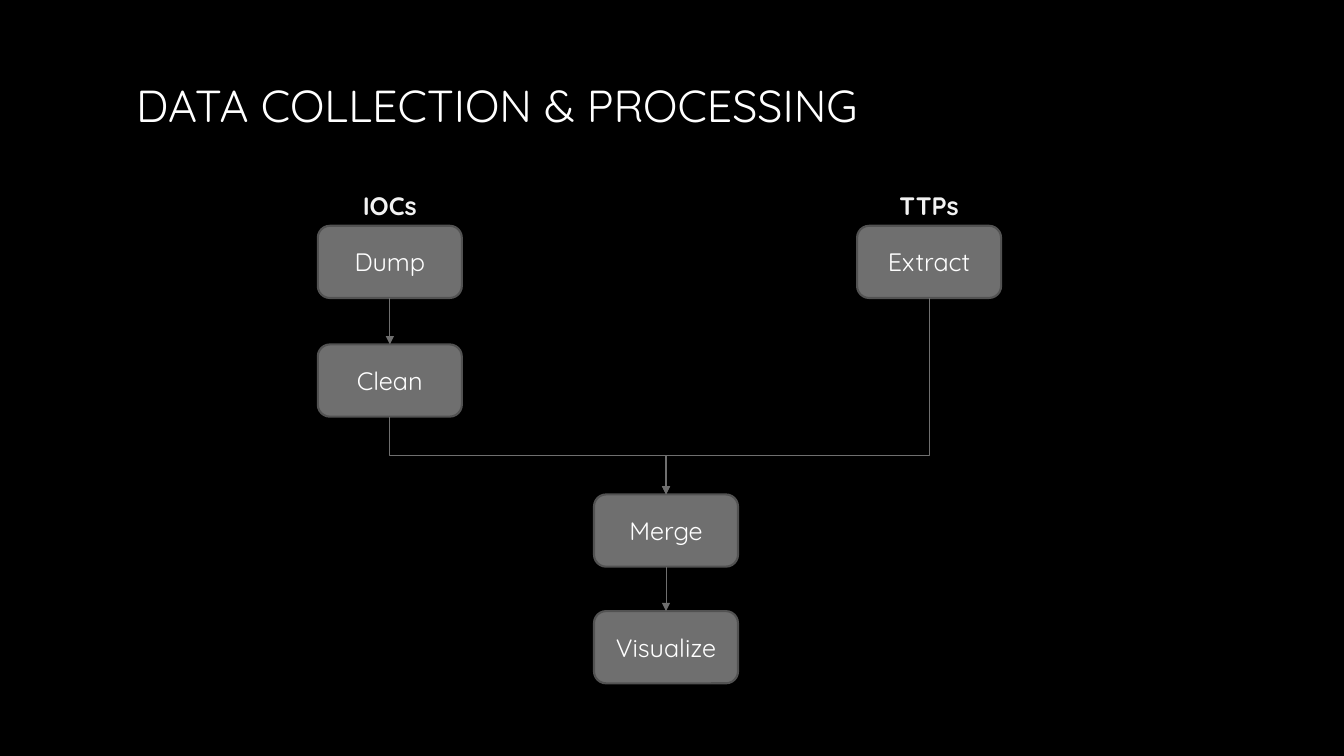
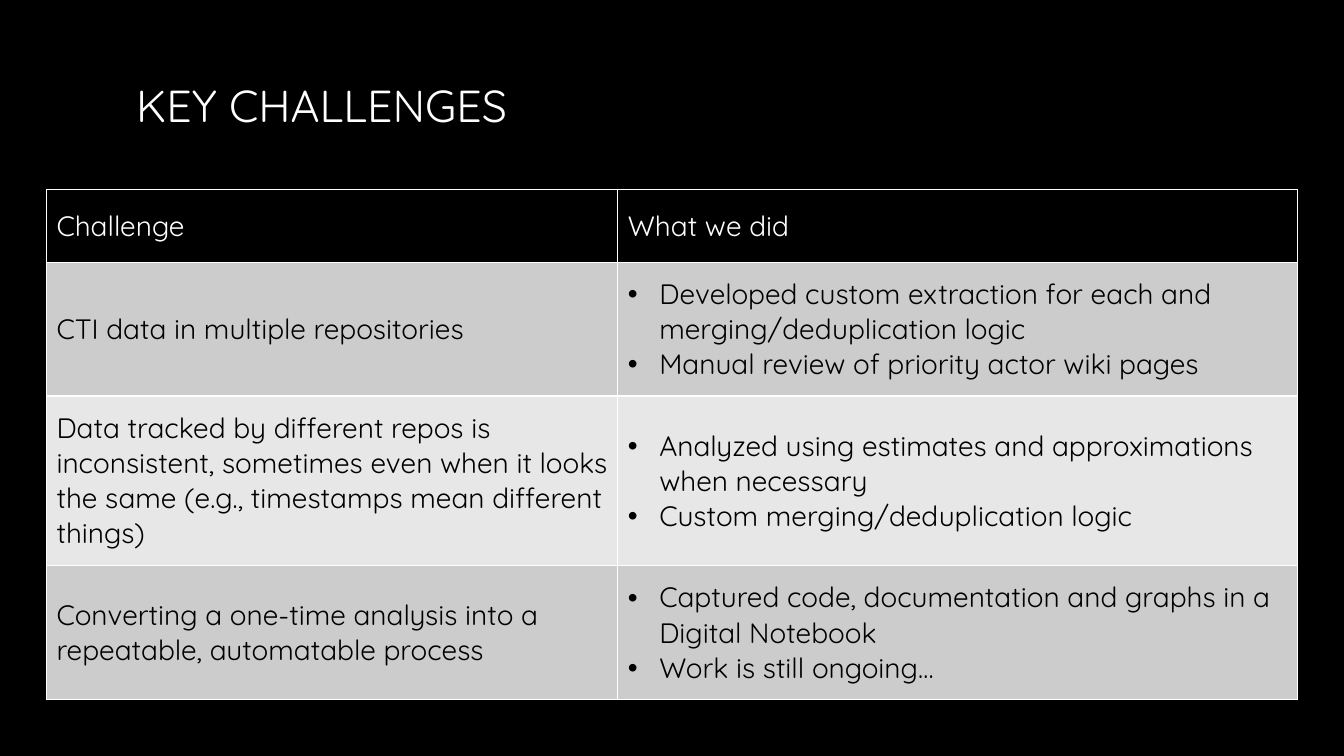
from copy import deepcopy

from lxml.etree import SubElement
from pptx import Presentation
from pptx.dml.color import RGBColor
from pptx.enum.shapes import MSO_CONNECTOR, MSO_SHAPE
from pptx.enum.text import MSO_ANCHOR, PP_ALIGN
from pptx.oxml.ns import qn
from pptx.util import Cm, Pt

FONT = "Quicksand"
BLACK, WHITE, PALE = "000000", "FFFFFF", "F2F2F2"
GREY, EDGE = "6F6F6F", "525252"
BANDS = ("CCCCCC", "E7E7E7")

BOX_W, BOX_H = 3.63, 1.82
LEFT, MID, RIGHT = 8.01, 14.97, 21.6
BEND = 11.48

ROWS = [
    ("Challenge", "What we did"),
    (
        "CTI data in multiple repositories",
        [
            "Developed custom extraction for each and merging/deduplication logic",
            "Manual review of priority actor wiki pages",
        ],
    ),
    (
        "Data tracked by different repos is inconsistent, sometimes even when "
        "it looks the same (e.g., timestamps mean different things)",
        [
            "Analyzed using estimates and approximations when necessary",
            "Custom merging/deduplication logic",
        ],
    ),
    (
        "Converting a one-time analysis into a repeatable, automatable process",
        [
            "Captured code, documentation and graphs in a Digital Notebook",
            "Work is still ongoing…",
        ],
    ),
]


def paint(fill, color):
    fill.solid()
    fill.fore_color.rgb = RGBColor.from_string(color)


def write(para, text, size, color, bold=False, align=PP_ALIGN.LEFT):
    para.alignment = align
    run = para.add_run()
    run.text = text
    run.font.name = FONT
    run.font.size = Pt(size)
    run.font.bold = bold
    paint(run.font.fill, color)


def add_text(slide, text, place, size, color, **style):
    frame = slide.shapes.add_textbox(*map(Cm, place)).text_frame
    frame.word_wrap = True
    frame.vertical_anchor = MSO_ANCHOR.MIDDLE
    write(frame.paragraphs[0], text, size, color, **style)


def add_page(deck, title):
    slide = deck.slides.add_slide(deck.slide_layouts[6])
    paint(slide.background.fill, BLACK)
    add_text(slide, title, (3.18, 1.7, 27.5, 1.88), 32, WHITE)
    return slide


def add_label(slide, text, left):
    place = (left, 4.67, BOX_W, 1.02)
    add_text(slide, text, place, 18, PALE, bold=True, align=PP_ALIGN.CENTER)


def add_box(slide, text, left, top):
    place = map(Cm, (left, top, BOX_W, BOX_H))
    box = slide.shapes.add_shape(MSO_SHAPE.ROUNDED_RECTANGLE, *place)
    box.shadow.inherit = False
    paint(box.fill, GREY)
    paint(box.line.fill, EDGE)
    box.line.width = Pt(1.5)
    frame = box.text_frame
    frame.word_wrap = True
    frame.vertical_anchor = MSO_ANCHOR.MIDDLE
    write(frame.paragraphs[0], text, 18, WHITE, align=PP_ALIGN.CENTER)
    return box


def add_line(slide, kind, ends, start, end):
    line = slide.shapes.add_connector(kind, *ends)
    paint(line.line.fill, GREY)
    line.line.width = Pt(0.75)
    SubElement(line.line._get_or_add_ln(), qn("a:tailEnd"), type="triangle")
    props = line._element.spPr
    SubElement(props, qn("a:effectLst"))
    frame = deepcopy(props.find(qn("a:xfrm")))
    line.begin_connect(start, 2)
    line.end_connect(end, 0)
    props.replace(props.find(qn("a:xfrm")), frame)
    return props


def find_ends(start, end):
    return (
        start.left + start.width // 2,
        start.top + start.height,
        end.left + end.width // 2,
        end.top,
    )


def add_arrow(slide, start, end):
    add_line(slide, MSO_CONNECTOR.STRAIGHT, find_ends(start, end), start, end)


def add_elbow(slide, start, end):
    x1, y1, x2, y2 = find_ends(start, end)
    mid_x, mid_y = (x1 + x2) // 2, (y1 + y2) // 2
    wide, high = (x2 - x1) // 2, (y2 - y1) // 2
    ends = (mid_x - high, mid_y + wide, mid_x + high, mid_y - wide)
    props = add_line(slide, MSO_CONNECTOR.ELBOW, ends, start, end)
    props.find(qn("a:xfrm")).set("rot", "5400000")
    shape = props.find(qn("a:prstGeom"))
    guides = shape.find(qn("a:avLst"))
    if guides is None:
        guides = SubElement(shape, qn("a:avLst"))
    share = round((Cm(BEND) - y1) / (y2 - y1) * 100000)
    SubElement(guides, qn("a:gd"), name="adj1", fmla=f"val {share}")


def add_edge(cell, side):
    edge = SubElement(cell._tc.get_or_add_tcPr(), qn(f"a:{side}"), w=str(Pt(1)))
    fill = SubElement(edge, qn("a:solidFill"))
    SubElement(fill, qn("a:srgbClr"), val=WHITE)


def add_bullet(para):
    props = para._p.get_or_add_pPr()
    props.set("marL", str(Cm(0.79)))
    props.set("indent", str(-Cm(0.79)))
    SubElement(props, qn("a:buFont"), typeface="Arial")
    SubElement(props, qn("a:buChar"), char="•")


def fill_cell(cell, content, color, back):
    for side in ("lnL", "lnR", "lnT", "lnB"):
        add_edge(cell, side)
    paint(cell.fill, back)
    cell.vertical_anchor = MSO_ANCHOR.MIDDLE
    listed = isinstance(content, list)
    frame = cell.text_frame
    for i, text in enumerate(content if listed else [content]):
        para = frame.add_paragraph() if i else frame.paragraphs[0]
        write(para, text, 20, color)
        if listed:
            add_bullet(para)


def add_grid(slide, rows, place, widths, heights):
    shape = slide.shapes.add_table(len(rows), len(widths), *map(Cm, place))
    table = shape.table
    table.horz_banding = False
    for col, width in zip(table.columns, widths):
        col.width = Cm(width)
    for r, (row, height) in enumerate(zip(rows, heights)):
        table.rows[r].height = Cm(height)
        color, back = (BLACK, BANDS[(r - 1) % 2]) if r else (WHITE, BLACK)
        for c, content in enumerate(row):
            fill_cell(table.cell(r, c), content, color, back)


def draw_flow(deck):
    slide = add_page(deck, "DATA COLLECTION & PROCESSING")
    dump = add_box(slide, "Dump", LEFT, 5.69)
    clean = add_box(slide, "Clean", LEFT, 8.68)
    extract = add_box(slide, "Extract", RIGHT, 5.69)
    merge = add_box(slide, "Merge", MID, 12.46)
    view = add_box(slide, "Visualize", MID, 15.4)
    add_label(slide, "IOCs", LEFT)
    add_label(slide, "TTPs", RIGHT)
    add_arrow(slide, dump, clean)
    add_elbow(slide, clean, merge)
    add_elbow(slide, extract, merge)
    add_arrow(slide, merge, view)


def draw_table(deck):
    slide = add_page(deck, "KEY CHALLENGES")
    widths, heights = (14.4, 17.12), (1.83, 3.37, 4.27, 3.38)
    place = (1.17, 4.78, sum(widths), sum(heights))
    add_grid(slide, ROWS, place, widths, heights)


def main():
    deck = Presentation()
    deck.slide_width, deck.slide_height = Cm(33.87), Cm(19.05)
    draw_flow(deck)
    draw_table(deck)
    deck.save("out.pptx")


if __name__ == "__main__":
    main()
